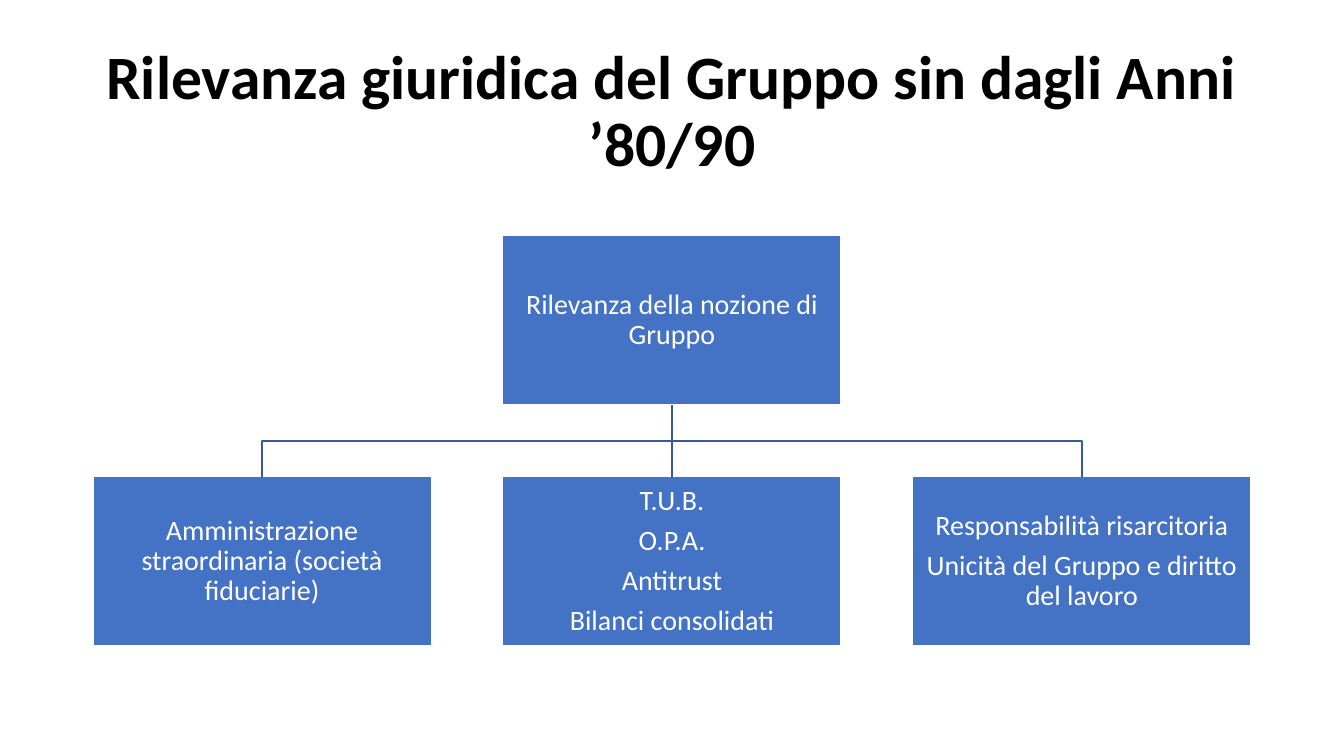
from dataclasses import dataclass

from pptx import Presentation
from pptx.dml.color import RGBColor
from pptx.enum.shapes import MSO_CONNECTOR, MSO_SHAPE
from pptx.enum.text import MSO_ANCHOR, PP_ALIGN
from pptx.oxml.ns import qn
from pptx.shapes.autoshape import Shape
from pptx.shapes.connector import Connector
from pptx.slide import Slide
from pptx.text.text import TextFrame
from pptx.util import Cm, Pt
from lxml import etree

RECTANGLE = MSO_SHAPE.RECTANGLE
STRAIGHT = MSO_CONNECTOR.STRAIGHT
MIDDLE = MSO_ANCHOR.MIDDLE
CENTER = PP_ALIGN.CENTER
BOTTOM_SITE, TOP_SITE = 2, 0

COLORS = {"title": "000000", "box": "4472C4", "white": "FFFFFF", "branch": "365B9D"}
FONT = "Calibri"

# Organisation chart grid, in centimetres
BOX_WIDTH, BOX_HEIGHT = 8.53, 4.27
LEFT, TOP = 2.34, 5.94
COLUMN_STEP, ROW_STEP = 10.33, 6.07
BOX_INSET = 0.04


@dataclass
class Box:
    column: int
    row: int
    lines: list[str]


ROOT = Box(1, 0, ["Rilevanza della nozione di Gruppo"])
CHILDREN = [
    Box(0, 1, ["Amministrazione straordinaria (società fiduciarie)"]),
    Box(1, 1, ["T.U.B.", "O.P.A.", "Antitrust", "Bilanci consolidati"]),
    Box(2, 1, ["Responsabilità risarcitoria", "Unicità del Gruppo e diritto del lavoro"]),
]


def color(name: str) -> RGBColor:
    return RGBColor.from_string(COLORS[name])


def write_lines(frame: TextFrame, lines: list[str], size: int, color_name: str,
                bold: bool = False, space_after: int = 0) -> None:
    frame.word_wrap = True
    frame.vertical_anchor = MIDDLE
    frame.text = "\n".join(lines)
    for paragraph in frame.paragraphs:
        paragraph.alignment = CENTER
        paragraph.line_spacing = 0.9
        paragraph.space_after = Pt(space_after)
        paragraph.font.name = FONT
        paragraph.font.size = Pt(size)
        paragraph.font.bold = bold
        paragraph.font.color.rgb = color(color_name)


def style_line(shape: Shape | Connector, color_name: str) -> None:
    shape.line.color.rgb = color(color_name)
    shape.line.width = Pt(1)


def draw_box(slide: Slide, box: Box) -> Shape:
    shape = slide.shapes.add_shape(
        RECTANGLE, Cm(LEFT + box.column * COLUMN_STEP), Cm(TOP + box.row * ROW_STEP),
        Cm(BOX_WIDTH), Cm(BOX_HEIGHT))
    shape.shadow.inherit = False
    shape.fill.solid()
    shape.fill.fore_color.rgb = color("box")
    style_line(shape, "white")
    frame = shape.text_frame
    frame.margin_left = frame.margin_right = Cm(BOX_INSET)
    frame.margin_top = frame.margin_bottom = Cm(BOX_INSET)
    write_lines(frame, box.lines, 20, "white", space_after=7)
    return shape


def draw_branch(slide: Slide, parent: Shape, child: Shape) -> None:
    start_x = parent.left + parent.width // 2
    start_y = parent.top + parent.height
    end_x = child.left + child.width // 2
    if start_x == end_x:
        connector = slide.shapes.add_connector(STRAIGHT, start_x, start_y, end_x, child.top)
        connector.begin_connect(parent, BOTTOM_SITE)
        connector.end_connect(child, TOP_SITE)
        style_line(connector, "branch")
        etree.SubElement(connector._element.spPr, qn("a:effectLst"))
        return
    middle_y = (start_y + child.top) // 2
    builder = slide.shapes.build_freeform(start_x, start_y)
    builder.add_line_segments(
        [(start_x, middle_y), (end_x, middle_y), (end_x, child.top)], close=False)
    branch = builder.convert_to_shape()
    branch.shadow.inherit = False
    branch.fill.background()
    style_line(branch, "branch")


def main() -> None:
    presentation = Presentation()
    presentation.slide_width = Cm(33.87)
    presentation.slide_height = Cm(19.05)
    slide = presentation.slides.add_slide(presentation.slide_layouts[6])

    # Title
    title = slide.shapes.add_textbox(Cm(2.33), Cm(1.01), Cm(29.21), Cm(3.68))
    write_lines(title.text_frame, ["Rilevanza giuridica del Gruppo sin dagli Anni ’80/90"],
                44, "title", bold=True)

    # Boxes and the branches that join them
    root = draw_box(slide, ROOT)
    for child in CHILDREN:
        draw_branch(slide, root, draw_box(slide, child))

    presentation.save("out.pptx")


if __name__ == "__main__":
    main()
